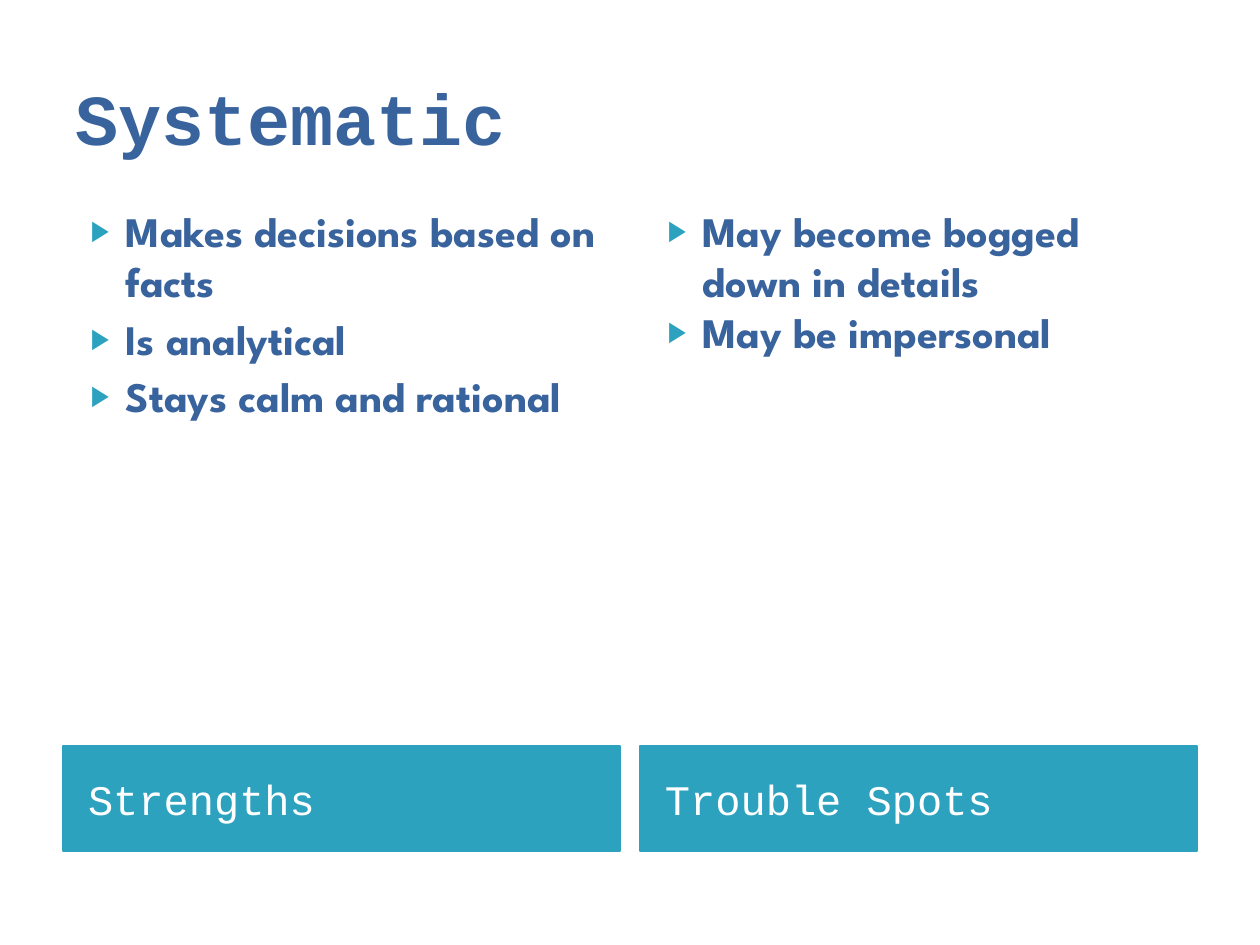
from lxml import etree
from pptx import Presentation
from pptx.dml.color import RGBColor
from pptx.enum.text import MSO_ANCHOR, MSO_AUTO_SIZE, PP_ALIGN
from pptx.oxml.ns import qn
from pptx.util import Pt

LEFT = PP_ALIGN.LEFT
MIDDLE, TOP = MSO_ANCHOR.MIDDLE, MSO_ANCHOR.TOP
NO_FIT = MSO_AUTO_SIZE.NONE
SCALE = 914400 // 126
COLORS = {"ink": "39639D", "accent": "2DA2BF", "white": "FFFFFF"}
MONO, SANS = "Courier New", "League Spartan"


class Deck:
    """Styles the placeholders of one slide, with lengths in px."""

    def __init__(self, slide):
        self.slide = slide

    def color(self, name):
        return RGBColor.from_string(COLORS[name])

    def place(self, index, box, anchor):
        shape = self.slide.placeholders[index]
        shape.left, shape.top, shape.width, shape.height = (n * SCALE for n in box)
        frame = shape.text_frame
        frame.word_wrap = True
        frame.auto_size = NO_FIT
        frame.vertical_anchor = anchor
        return shape

    def style(self, para, font, size, color, bold):
        para.alignment = LEFT
        para.space_before = Pt(0)
        for run in para.runs:
            run.font.name = font
            run.font.size = Pt(size)
            run.font.bold = bold
            run.font.color.rgb = self.color(color)

    def title(self, text, box):
        frame = self.place(0, box, MIDDLE).text_frame
        frame.text = text
        self.style(frame.paragraphs[0], MONO, 41, "ink", True)

    def bar(self, index, text, box):
        shape = self.place(index, box, MIDDLE)
        shape.fill.solid()
        shape.fill.fore_color.rgb = self.color("accent")
        shape.line.color.rgb = self.color("accent")
        shape.line.width = Pt(0.75)
        frame = shape.text_frame
        frame.margin_left = 25 * SCALE
        frame.text = text
        self.style(frame.paragraphs[0], MONO, 24, "white", False)

    def bullet(self, para):
        props = para._p.get_or_add_pPr()
        props.set("marL", str(50 * SCALE))
        props.set("indent", str(-35 * SCALE))
        tint = etree.SubElement(props, qn("a:buClr"))
        etree.SubElement(tint, qn("a:srgbClr"), val=COLORS["accent"])
        etree.SubElement(props, qn("a:buSzPct"), val="68000")
        etree.SubElement(props, qn("a:buChar"), char="▶")

    def list(self, index, items, box, gap):
        frame = self.place(index, box, TOP).text_frame
        frame.text = "\n".join(items)
        for rank, para in enumerate(frame.paragraphs):
            self.bullet(para)
            self.style(para, SANS, 24, "ink", True)
            if rank:
                para.space_before = Pt(gap)


def main():
    show = Presentation()
    show.slide_width, show.slide_height = 1260 * SCALE, 945 * SCALE
    deck = Deck(show.slides.add_slide(show.slide_layouts[4]))
    edge, width, gap = 63, 557, 20
    deck.title("Systematic", (edge, 38, 2 * width + gap, 158))
    columns = [
        ("Strengths", 4, ["Makes decisions based on facts", "Is analytical",
                          "Stays calm and rational"]),
        ("Trouble Spots", 0, ["May become bogged down in details",
                              "May be impersonal"]),
    ]
    for col, (label, space, items) in enumerate(columns):
        left = edge + col * (width + gap)
        deck.bar(1 + 2 * col, label, (left, 746, width, 105))
        deck.list(2 + 2 * col, items, (left, 199, width, 543), space)
    show.save("out.pptx")


if __name__ == "__main__":
    main()
